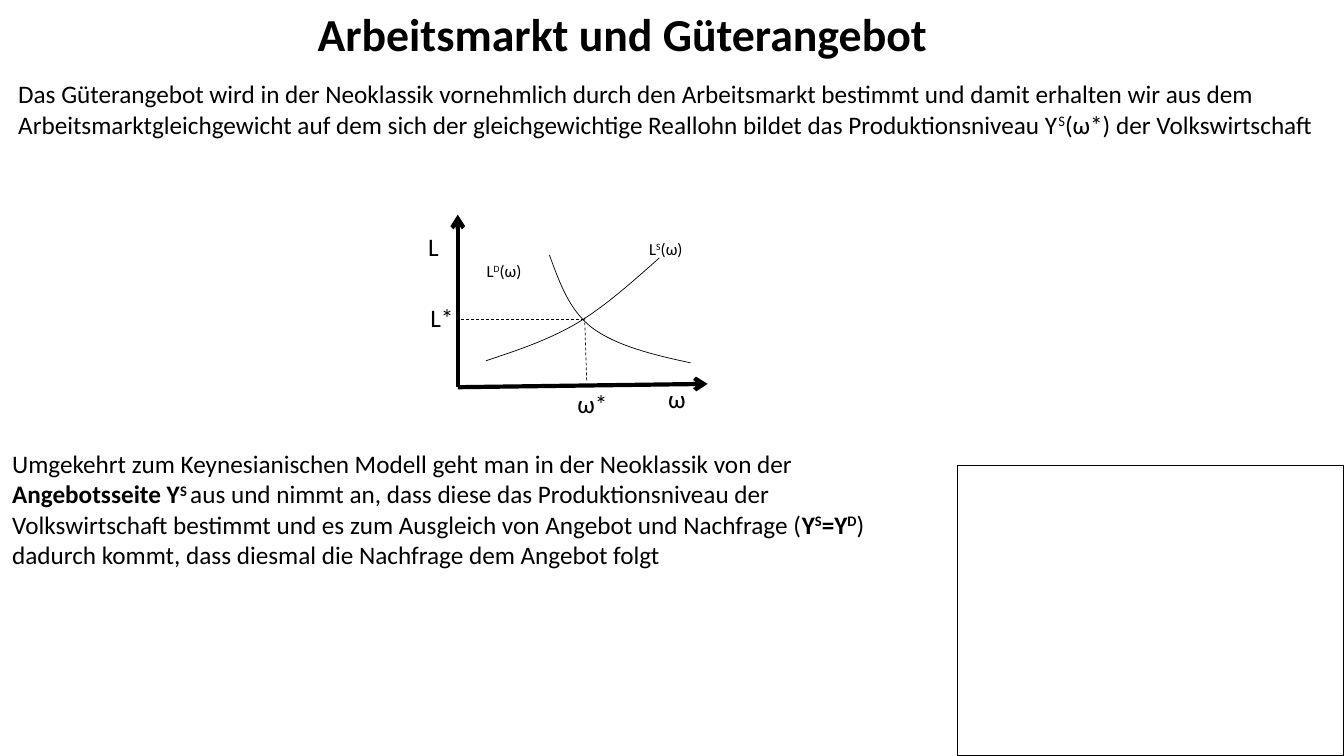
from pptx import Presentation, util as u
from pptx.dml.color import RGBColor
from pptx.enum import dml, shapes, text
from pptx.oxml.ns import qn
from lxml import etree

BLACK = RGBColor(0, 0, 0)
FONT = "Calibri"
COLS, ROWS = 160, 90


class Deck:
    """Draws styled elements on one slide, placed by grid column and row."""

    def __init__(self):
        self.prs = Presentation()
        self.prs.slide_width = u.Inches(13.33)
        self.prs.slide_height = u.Inches(7.5)
        self.slide = self.prs.slides.add_slide(self.prs.slide_layouts[3])
        self.items = self.slide.shapes

    def x(self, col):
        return round(self.prs.slide_width * col / COLS)

    def y(self, row):
        return round(self.prs.slide_height * row / ROWS)

    def box(self, col, row, wide, high):
        return self.x(col), self.y(row), self.x(wide), self.y(high)

    def fill(self, frame, parts, size):
        para = frame.paragraphs[0]
        for words, marks in parts:
            run = para.add_run()
            run.text = words
            font = run.font
            font.name, font.size = FONT, u.Pt(size)
            font.color.rgb = BLACK
            font.bold = "b" in marks
            if "s" in marks:
                run._r.get_or_add_rPr().set("baseline", "30000")
        return para

    def holder(self, idx, area, parts, size, wrap=True):
        item = self.slide.placeholders[idx]
        item.left, item.top, item.width, item.height = self.box(*area)
        frame = item.text_frame
        frame.word_wrap = wrap
        frame.auto_size = text.MSO_AUTO_SIZE.NONE
        frame.margin_left = frame.margin_right = u.Inches(0.09)
        frame.margin_top = frame.margin_bottom = u.Inches(0.04)
        return self.fill(frame, parts, size)

    def title(self, area, words, size):
        self.holder(0, area, [(words, "b")], size, wrap=False)

    def body(self, idx, area, parts, size=18):
        para = self.holder(idx, area, parts, size)
        para.space_before = u.Pt(0)
        props = para._p.get_or_add_pPr()
        props.set("marL", "0")
        props.set("indent", "0")
        etree.SubElement(props, qn("a:buNone"))

    def label(self, area, parts, size=18):
        frame = self.items.add_textbox(*self.box(*area)).text_frame
        frame.word_wrap = False
        self.fill(frame, parts, size)

    def line(self, start, end, width, arrow=False, dash=False):
        item = self.items.add_connector(
            shapes.MSO_CONNECTOR.STRAIGHT, self.x(start[0]), self.y(start[1]),
            self.x(end[0]), self.y(end[1]))
        item.line.color.rgb = BLACK
        item.line.width = u.Pt(width)
        if dash:
            item.line.dash_style = dml.MSO_LINE.DASH
        if arrow:
            etree.SubElement(item.line._get_or_add_ln(), qn("a:tailEnd"), type="arrow")
        etree.SubElement(item._element.spPr, qn("a:effectLst"))

    def curve(self, knots, steps=16):
        dots = [knots[0]]
        for at in range(0, len(knots) - 1, 3):
            a, b, c, d = knots[at:at + 4]
            for step in range(1, steps + 1):
                t = step / steps
                s = 1 - t
                dots.append([s**3 * a[i] + 3 * s * s * t * b[i] + 3 * s * t * t * c[i]
                             + t**3 * d[i] for i in (0, 1)])
        spots = [(self.x(col), self.y(row)) for col, row in dots]
        pen = self.items.build_freeform(*spots[0])
        pen.add_line_segments(spots[1:], close=False)
        self.trim(pen.convert_to_shape(), 0.5)

    def frame(self, area):
        self.trim(self.items.add_shape(shapes.MSO_SHAPE.RECTANGLE, *self.box(*area)), 1)

    def trim(self, item, width):
        item.shadow.inherit = False
        item.fill.background()
        item.line.color.rgb = BLACK
        item.line.width = u.Pt(width)


def main():
    deck = Deck()
    deck.title((36.5, 0, 75.25, 7.8), "Arbeitsmarkt und Güterangebot", 32.7)
    deck.body(1, (1.08, 8.88, 157.08, 8.5), [
        ("Das Güterangebot wird in der Neoklassik vornehmlich durch den Arbeitsmarkt "
         "bestimmt und damit erhalten wir aus dem Arbeitsmarktgleichgewicht auf dem sich "
         "der gleichgewichtige Reallohn bildet das Produktionsniveau Y", ""),
        ("S", "s"), ("(ω*) der Volkswirtschaft", "")])
    deck.body(2, (0.36, 52.9, 110.04, 15.85), [
        ("Umgekehrt zum Keynesianischen Modell geht man in der Neoklassik von der ", ""),
        ("Angebotsseite Y", "b"), ("S ", "bs"),
        ("aus und nimmt an, dass diese das Produktionsniveau der Volkswirtschaft bestimmt "
         "und es zum Ausgleich von Angebot und Nachfrage (", ""),
        ("Y", "b"), ("S", "bs"), ("=Y", "b"), ("D", "bs"),
        (") dadurch kommt, dass diesmal die Nachfrage dem Angebot folgt", "")])

    origin = (54.5, 46.1)
    for tip in ((84.25, 45.7), (54.5, 25.55)):
        deck.line(origin, tip, 3, arrow=True)
    deck.curve([(57.85, 42.95), (61.45, 41.75), (65.15, 40.55), (68.65, 38.5),
                (72, 36.5), (75.25, 33.6), (78.5, 30.7)])
    deck.curve([(65.4, 30.35), (66.6, 33.6), (67.7, 36.85), (70.45, 39),
                (73.3, 41.15), (77.75, 42.25), (82.2, 43.2)])
    deck.line((69.6, 37.8), (69.85, 45.5), 0.5, dash=True)
    deck.line((69.5, 38.05), (54.5, 38.05), 0.5, dash=True)

    for words, col, row, wide in (("L", 49.8, 27, 3.7), ("ω", 78.35, 45.1, 4.55),
                                  ("L*", 50.05, 35.4, 5.3), ("ω*", 67.55, 45.7, 6.25)):
        deck.label((col, row, wide, 4.8), [(words, "")])
    for side, col, row, wide in (("D", 56.75, 30.5, 6.85), ("S", 76.1, 27.85, 6.5)):
        deck.label((col, row, wide, 3.6), [("L", ""), (side, "s"), ("(ω)", "")], 12)

    deck.frame((114, 55.45, 46, 34.55))
    deck.prs.save("out.pptx")


if __name__ == "__main__":
    main()
